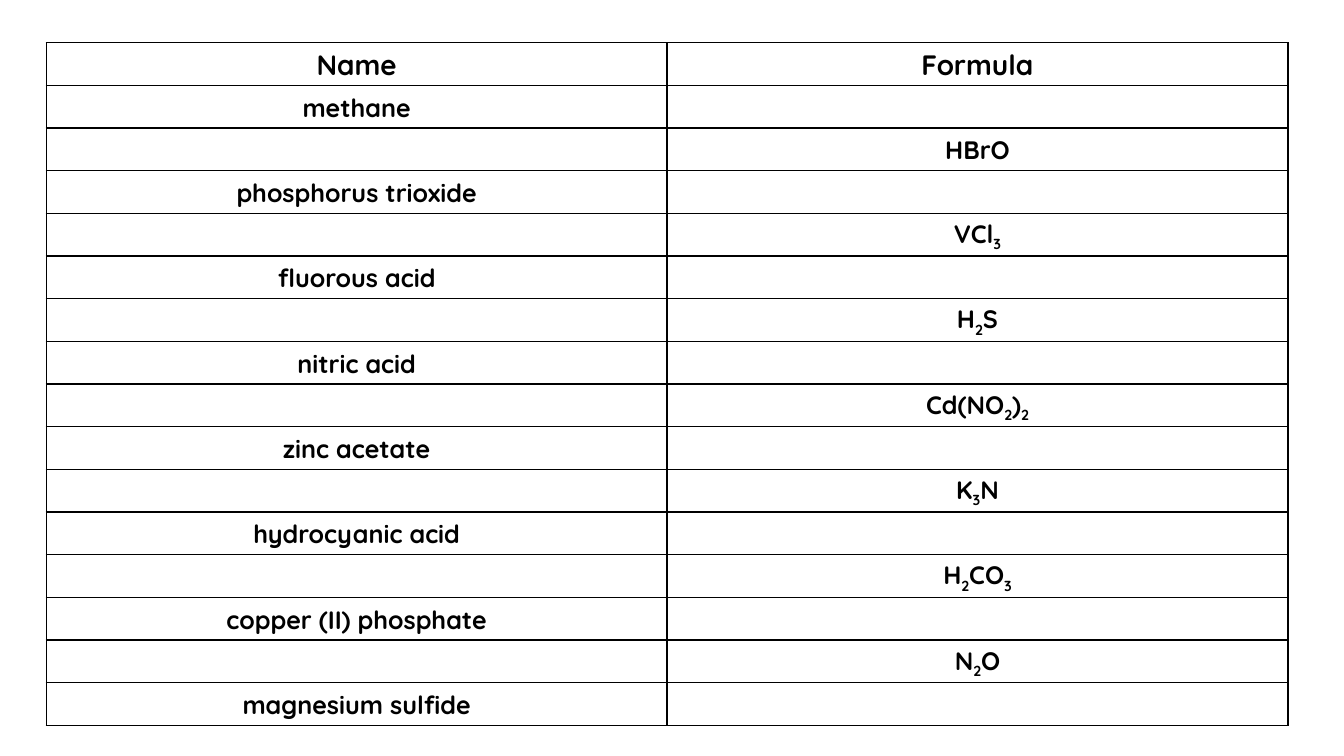
from dataclasses import dataclass
from itertools import groupby

from lxml import etree
from pptx import Presentation
from pptx.dml.color import RGBColor
from pptx.enum.text import MSO_ANCHOR, PP_ALIGN
from pptx.oxml.ns import qn
from pptx.slide import Slide
from pptx.table import _Cell
from pptx.util import Emu, Pt

CENTER = PP_ALIGN.CENTER
MIDDLE = MSO_ANCHOR.MIDDLE
EMU_PER_PX = 6350
BLANK_LAYOUT = 6
BORDER_TAGS = ("a:lnL", "a:lnR", "a:lnT", "a:lnB")


@dataclass(frozen=True)
class Theme:
    font: str = "Quicksand"
    ink: str = "000000"
    heading_size: int = 20
    body_size: int = 18
    line_spacing: float = 1.07
    border_width: int = 1
    subscript: int = -25000


@dataclass(frozen=True)
class Compound:
    name: str = ""
    formula: str = ""


@dataclass(frozen=True)
class Grid:
    left: int
    top: int
    column_width: int
    row_height: int
    side_margin: int


THEME = Theme()
GRID = Grid(left=66, top=61, column_width=887, row_height=61, side_margin=6)
HEADING = Compound("Name", "Formula")
COMPOUNDS = (
    Compound(name="methane"),
    Compound(formula="HBrO"),
    Compound(name="phosphorus trioxide"),
    Compound(formula="VCl3"),
    Compound(name="fluorous acid"),
    Compound(formula="H2S"),
    Compound(name="nitric acid"),
    Compound(formula="Cd(NO2)2"),
    Compound(name="zinc acetate"),
    Compound(formula="K3N"),
    Compound(name="hydrocyanic acid"),
    Compound(formula="H2CO3"),
    Compound(name="copper (II) phosphate"),
    Compound(formula="N2O"),
    Compound(name="magnesium sulfide"),
)


def px(length: int) -> Emu:
    return Emu(length * EMU_PER_PX)


def add_borders(cell: _Cell) -> None:
    properties = cell._tc.get_or_add_tcPr()
    for position, tag in enumerate(BORDER_TAGS):
        line = etree.Element(qn(tag), w=str(Pt(THEME.border_width)))
        fill = etree.SubElement(line, qn("a:solidFill"))
        etree.SubElement(fill, qn("a:srgbClr"), val=THEME.ink)
        properties.insert(position, line)


def write_cell(cell: _Cell, text: str, size: int) -> None:
    cell.fill.background()
    cell.vertical_anchor = MIDDLE
    cell.margin_left = cell.margin_right = px(GRID.side_margin)
    cell.margin_top = cell.margin_bottom = px(0)
    add_borders(cell)

    para = cell.text_frame.paragraphs[0]
    para.alignment = CENTER
    para.line_spacing = THEME.line_spacing
    para.font.name = THEME.font
    para.font.size = Pt(size)
    para.font.bold = True
    para.font.color.rgb = RGBColor.from_string(THEME.ink)
    for is_subscript, characters in groupby(text, str.isdigit):
        span = para.add_run()
        span.text = "".join(characters)
        if is_subscript:
            span._r.get_or_add_rPr().set("baseline", str(THEME.subscript))


def add_compound_table(page: Slide) -> None:
    rows = (HEADING, *COMPOUNDS)
    table = page.shapes.add_table(
        len(rows), 2, px(GRID.left), px(GRID.top),
        px(2 * GRID.column_width), px(len(rows) * GRID.row_height),
    ).table
    table.first_row = False
    table.horz_banding = False
    for column in table.columns:
        column.width = px(GRID.column_width)
    for row, compound in zip(table.rows, rows):
        row.height = px(GRID.row_height)
        size = THEME.heading_size if compound is HEADING else THEME.body_size
        for cell, text in zip(row.cells, (compound.name, compound.formula)):
            write_cell(cell, text, size)


def main() -> None:
    deck = Presentation()
    deck.slide_width = px(1920)
    deck.slide_height = px(1080)
    page = deck.slides.add_slide(deck.slide_layouts[BLANK_LAYOUT])
    add_compound_table(page)
    deck.save("out.pptx")


if __name__ == "__main__":
    main()
